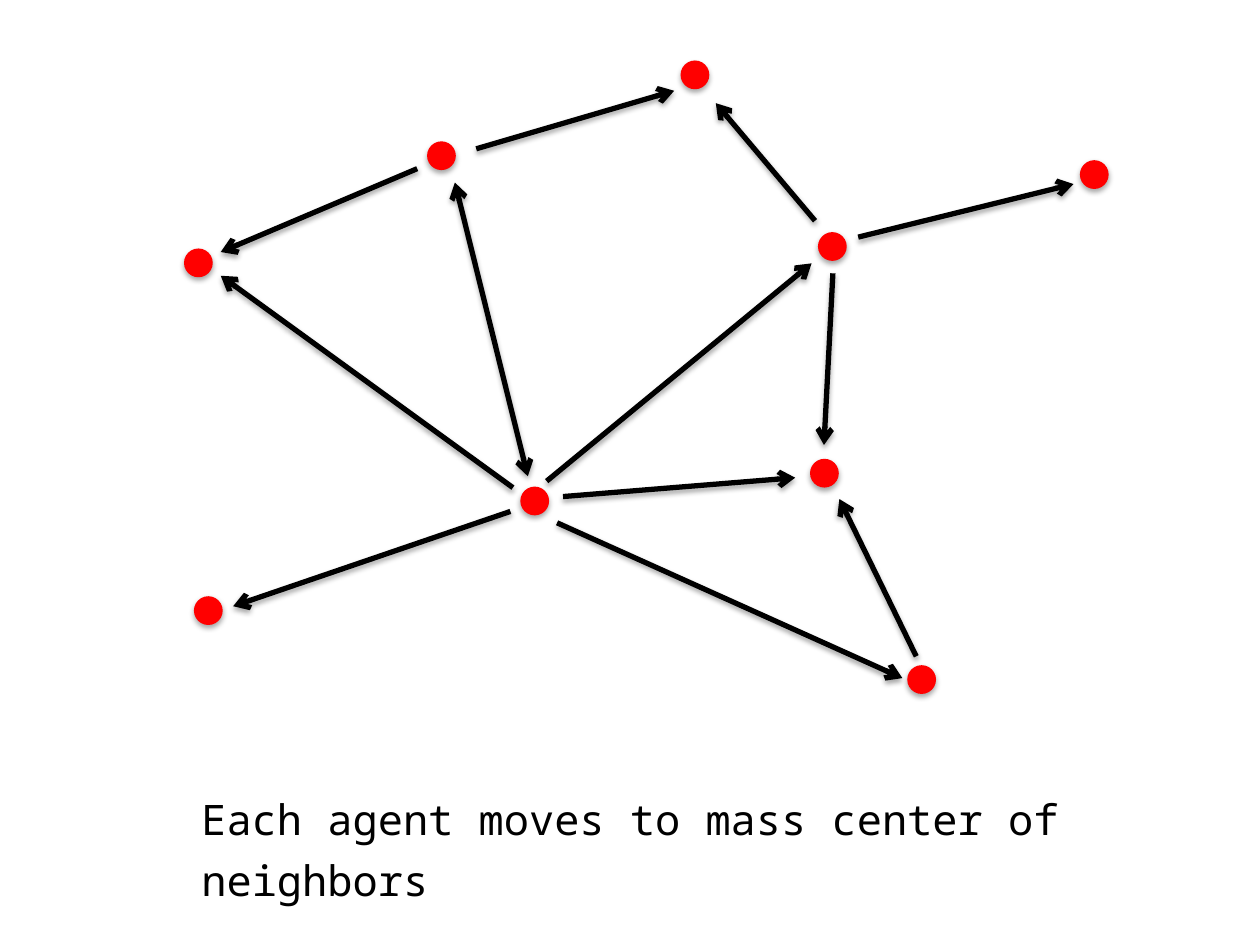
from dataclasses import dataclass

from lxml import etree
from pptx import Presentation
from pptx.dml.color import RGBColor
from pptx.enum.shapes import MSO_CONNECTOR, MSO_SHAPE
from pptx.enum.text import MSO_ANCHOR
from pptx.oxml import parse_xml
from pptx.oxml.ns import nsdecls, qn
from pptx.util import Cm, Pt

OVAL = MSO_SHAPE.OVAL
LINE = MSO_CONNECTOR.STRAIGHT
MIDDLE = MSO_ANCHOR.MIDDLE


@dataclass(frozen=True)
class Theme:
    agent: RGBColor = RGBColor(0xFF, 0, 0)
    ink: RGBColor = RGBColor(0, 0, 0)
    font: str = "Noto Sans Mono"
    size: int = 24
    stroke: int = 3
    dot: float = 0.58


# Centres of the agents, in cm
AGENTS = [
    (14.01, 1.51), (4, 5.3), (8.9, 3.14), (22.06, 3.52), (10.78, 10.1),
    (16.78, 4.97), (16.62, 9.54), (4.2, 12.31), (18.58, 13.7),
]

# Arrow tip and arrow start, in cm
ARROWS = [
    ((21.64, 3.71), (17.3, 4.78)),
    ((14.43, 2.08), (16.43, 4.45)),
    ((16.61, 8.97), (16.79, 5.51)),
    ((13.59, 1.83), (9.6, 3)),
    ((16.03, 9.63), (11.35, 10.01)),
    ((16.92, 10.06), (18.47, 13.23)),
    ((4.45, 5.08), (8.41, 3.4)),
    ((4.7, 12.22), (10.29, 10.31)),
    ((18.19, 13.67), (11.23, 10.54)),
    ((4.45, 5.56), (10.34, 9.83)),
    ((16.36, 5.31), (11.02, 9.7)),
]
MUTUAL = ((10.64, 9.6), (9.17, 3.68))


class Board:
    """Draws on one slide in one theme; all lengths are in cm."""

    def __init__(self, slide, theme):
        self.shapes = slide.shapes
        self.theme = theme

    def shade(self, shape):
        """Add the soft shadow; call it after fill and line are set."""
        shape._element.spPr.append(parse_xml(
            f'<a:effectLst {nsdecls("a")}>'
            f'<a:outerShdw blurRad="{Pt(3.1)}" dist="{Pt(1.8)}" dir="5400000" rotWithShape="0">'
            '<a:srgbClr val="000000"><a:alpha val="35000"/></a:srgbClr>'
            '</a:outerShdw></a:effectLst>'))

    def agent(self, x, y):
        dot = self.theme.dot
        shape = self.shapes.add_shape(
            OVAL, Cm(x - dot / 2), Cm(y - dot / 2), Cm(dot), Cm(dot))
        shape.fill.solid()
        shape.fill.fore_color.rgb = self.theme.agent
        shape.line.fill.background()
        self.shade(shape)

    def arrow(self, tip, start, ends=("headEnd",)):
        link = self.shapes.add_connector(LINE, *map(Cm, tip + start))
        link.line.color.rgb = self.theme.ink
        link.line.width = Pt(self.theme.stroke)
        stroke = link.line._get_or_add_ln()
        for end in ends:
            etree.SubElement(stroke, qn(f"a:{end}"), type="arrow")
        self.shade(link)

    def text(self, words, x, y, width, height):
        frame = self.shapes.add_textbox(
            Cm(x), Cm(y), Cm(width), Cm(height)).text_frame
        frame.word_wrap = True
        frame.vertical_anchor = MIDDLE
        line = frame.paragraphs[0]
        line.text = words
        line.line_spacing = 1.2
        line.font.name = self.theme.font
        line.font.size = Pt(self.theme.size)
        line.font.color.rgb = self.theme.ink


def main():
    deck = Presentation()
    deck.slide_width, deck.slide_height = Cm(25.4), Cm(19.05)
    blank = deck.slide_layouts[6]
    board = Board(deck.slides.add_slide(blank), Theme())
    for spot in AGENTS:
        board.agent(*spot)
    for tip, start in ARROWS:
        board.arrow(tip, start)
    board.arrow(*MUTUAL, ends=("headEnd", "tailEnd"))
    board.text("Each agent moves to mass center of neighbors",
               3.81, 16.13, 18.21, 1.78)
    deck.save("out.pptx")


if __name__ == "__main__":
    main()
